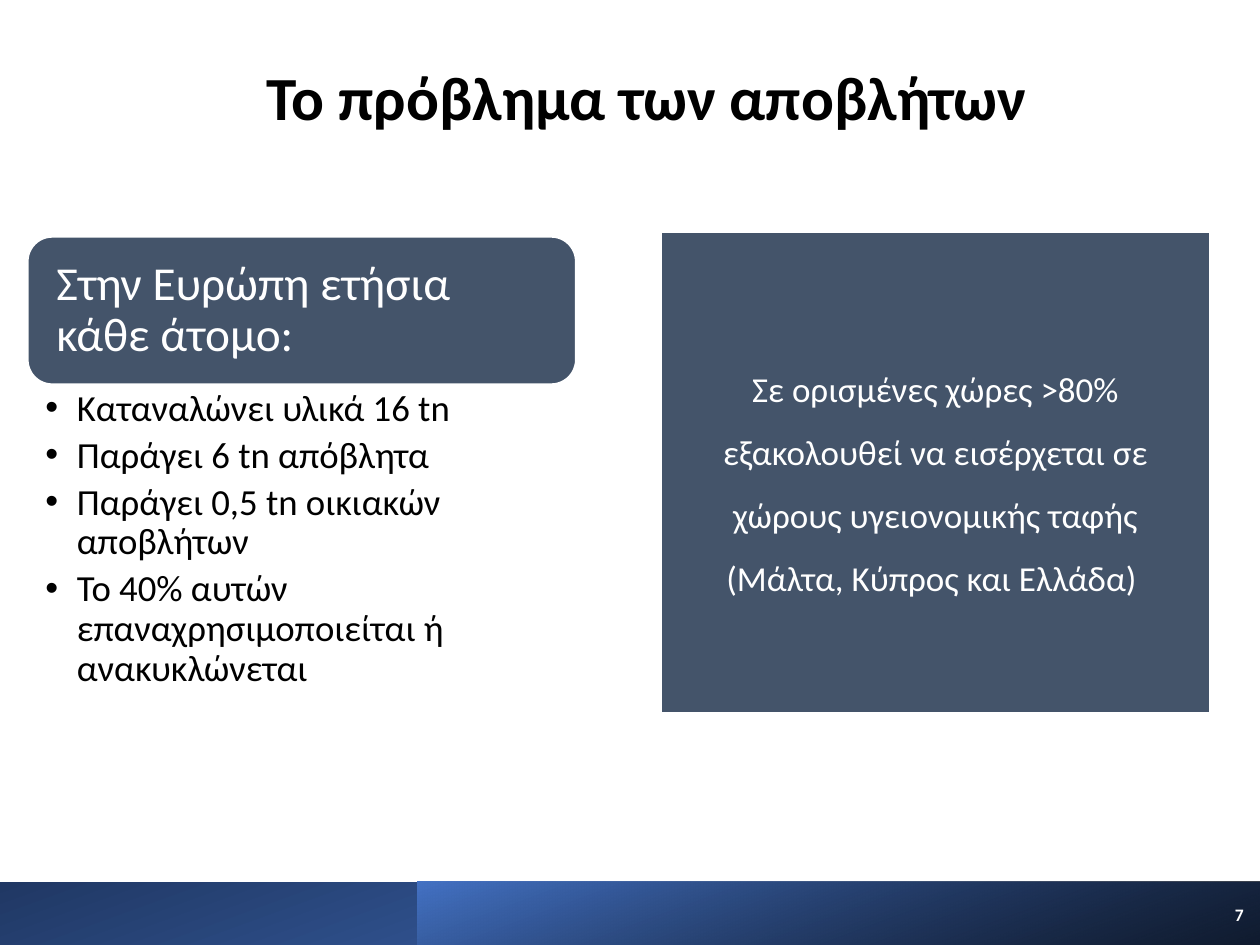
from dataclasses import dataclass

from lxml import etree
from pptx import Presentation
from pptx.dml.color import RGBColor
from pptx.enum import shapes, text
from pptx.oxml import ns
from pptx.util import Inches, Pt

KIND, ALIGN, ANCHOR = shapes.MSO_SHAPE, text.PP_ALIGN, text.MSO_ANCHOR


@dataclass(frozen=True)
class Theme:
    """Colours, font and type sizes of the slide."""
    font: str = "Calibri"
    dark: str = "000000"
    light: str = "FFFFFF"
    slate: str = "44546A"
    blue: str = "4472C4"
    navy: str = "203864"
    title: int = 35
    head: int = 27
    item: int = 21
    body: int = 20
    page: int = 10


THEME = Theme()


def rgb(code):
    """Turn a hex code into a colour."""
    return RGBColor.from_string(code)


def place(shape, box):
    """Move a shape to a box given in inches."""
    shape.left, shape.top, shape.width, shape.height = map(Inches, box)


def style(para, size, color, bold=False, align=ALIGN.LEFT, line=1.0, after=0):
    """Format a paragraph and its runs."""
    para.alignment, para.line_spacing = align, line
    para.space_before, para.space_after = Pt(0), Pt(after)
    for run in para.runs:
        font = run.font
        font.name, font.size, font.bold = THEME.font, Pt(size), bold
        font.color.rgb = rgb(color)


def setup(frame, anchor, pads=(0.1, 0.05, 0.1, 0.05)):
    """Set wrapping, anchor and insets of a text frame."""
    frame.word_wrap, frame.auto_size = True, text.MSO_AUTO_SIZE.NONE
    frame.vertical_anchor = anchor
    (frame.margin_left, frame.margin_top,
     frame.margin_right, frame.margin_bottom) = map(Inches, pads)


def bullet(para, indent):
    """Give a paragraph a hanging round bullet."""
    props = para._p.get_or_add_pPr()
    props.set("marL", str(Inches(indent)))
    props.set("indent", str(-Inches(indent)))
    etree.SubElement(props, ns.qn("a:buFont")).set("typeface", "Arial")
    etree.SubElement(props, ns.qn("a:buChar")).set("char", "•")


def panel(slide, kind, box, words, pad, **look):
    """Draw a slate panel with its text."""
    shape = slide.shapes.add_shape(kind, *map(Inches, box))
    shape.shadow.inherit = False
    shape.fill.solid()
    shape.fill.fore_color.rgb = rgb(THEME.slate)
    shape.line.color.rgb = rgb(THEME.light)
    shape.line.width = Pt(1)
    frame = shape.text_frame
    frame.text = words
    setup(frame, ANCHOR.MIDDLE, (pad,) * 4)
    style(frame.paragraphs[0], color=THEME.light, **look)


def band(slide, box, colors, angle, turn=0, alpha=None):
    """Draw a mirrored gradient band, its first stop optionally clear."""
    shape = slide.shapes.add_shape(KIND.RECTANGLE, *map(Inches, box))
    shape.shadow.inherit = False
    shape.line.fill.background()
    shape.rotation = turn
    shape._element.spPr.find(ns.qn("a:xfrm")).set("flipH", "1")
    shape.fill.gradient()
    shape.fill.gradient_angle = 360 - angle
    for stop, color, spot in zip(shape.fill.gradient_stops, colors, (0, 1)):
        stop.color.rgb, stop.position = rgb(color), spot
    if alpha:
        tint = next(shape._element.spPr.iter(ns.qn("a:srgbClr")))
        etree.SubElement(tint, ns.qn("a:alpha")).set("val", str(alpha * 1000))


def footer(slide, box, page):
    """Draw the bottom bands and the page number."""
    left, top, width, height = box
    split = 3.31
    band(slide, box, (THEME.blue, THEME.navy), 110, turn=180)
    band(slide, (left + split, top, width - split, height),
         (THEME.dark, THEME.blue), 290, alpha=76)
    note = slide.shapes.add_textbox(
        *map(Inches, (left + width - 0.4, top + 0.06, 0.37, 0.4)))
    frame = note.text_frame
    frame.text = page
    setup(frame, ANCHOR.MIDDLE)
    style(frame.paragraphs[0], THEME.page, THEME.light, True, ALIGN.RIGHT)


def heading(slide, box, words):
    """Place the slide title."""
    title = slide.shapes.title
    place(title, box)
    frame = title.text_frame
    frame.text = words
    setup(frame, ANCHOR.BOTTOM)
    style(frame.paragraphs[0], THEME.title, THEME.dark, True,
          ALIGN.RIGHT, 0.9, 6)


def facts(slide, box, head, items):
    """Place a headed list of bullets."""
    left, top, width, height = box
    cap = 1.17
    panel(slide, KIND.ROUNDED_RECTANGLE, (left, top, width, cap), head, 0.17,
          size=THEME.head, line=0.9)
    area = slide.shapes.add_textbox(
        *map(Inches, (left, top + cap, width, height - cap)))
    frame = area.text_frame
    frame.text = "\n".join(items)
    setup(frame, ANCHOR.TOP, (0.14, 0.04, 0.21, 0.04))
    for para in frame.paragraphs:
        bullet(para, 0.25)
        style(para, THEME.item, THEME.dark, line=0.9, after=4.2)


def main():
    """Build and save the slide."""
    deck = Presentation()
    deck.slide_width, deck.slide_height = Inches(10), Inches(7.5)
    slide = deck.slides.add_slide(deck.slide_layouts[5])
    footer(slide, (0, 7, 10, 0.5), "7")
    heading(slide, (1.65, 0.19, 6.71, 0.92), "Το πρόβλημα των αποβλήτων ")
    facts(slide, (0.22, 1.88, 4.35, 3.74), "Στην Ευρώπη ετήσια κάθε άτομο:", (
        "Καταναλώνει υλικά 16 tn",
        "Παράγει 6 tn απόβλητα",
        "Παράγει 0,5 tn οικιακών αποβλήτων",
        "Το 40% αυτών επαναχρησιμοποιείται ή ανακυκλώνεται",
    ))
    panel(slide, KIND.RECTANGLE, (5.25, 1.84, 4.35, 3.82),
          "Σε ορισμένες χώρες >80% εξακολουθεί να εισέρχεται σε χώρους "
          "υγειονομικής ταφής (Μάλτα, Κύπρος και Ελλάδα) ", 0.16,
          size=THEME.body, align=ALIGN.CENTER, line=1.5)
    deck.save("out.pptx")


if __name__ == "__main__":
    main()
